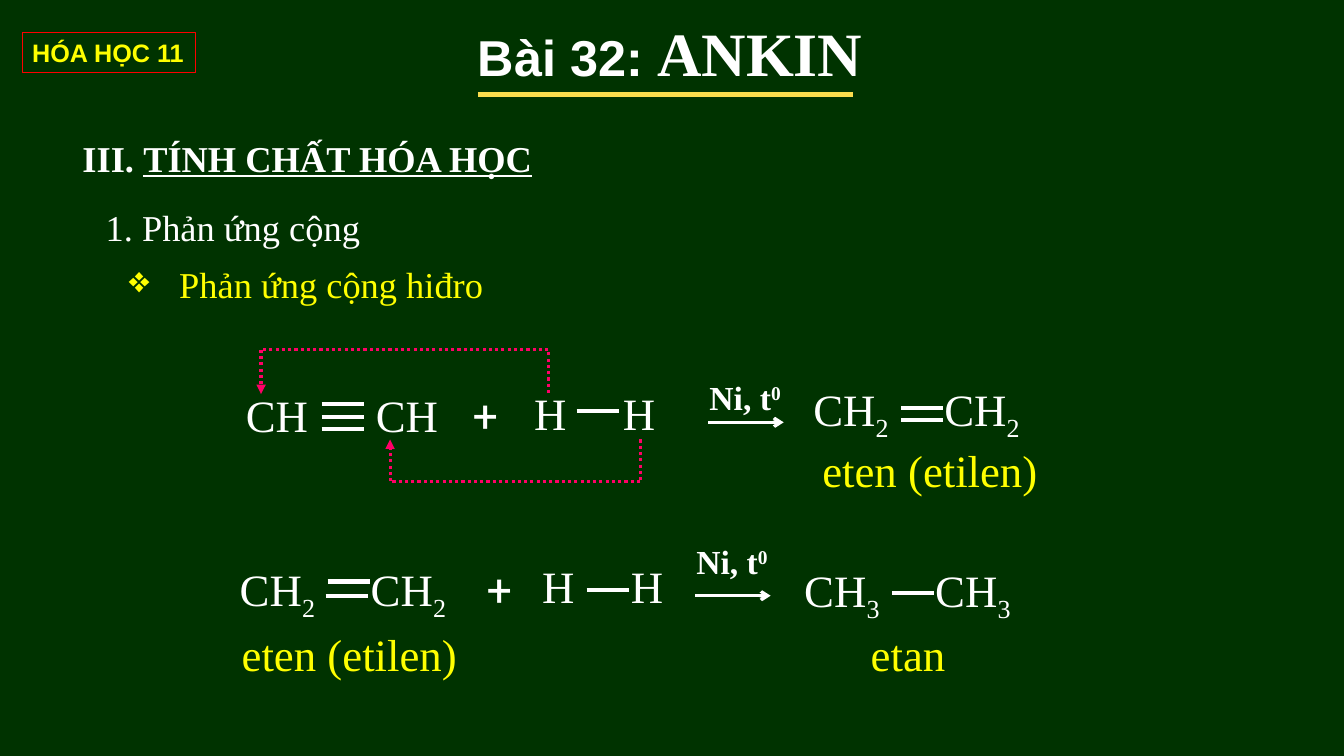
from dataclasses import dataclass

from lxml import etree
from pptx import Presentation, util as u
from pptx.dml.color import RGBColor
from pptx.enum import dml, shapes, text
from pptx.oxml.ns import qn


@dataclass(frozen=True)
class Theme:
    board: str = "003300"
    chalk: str = "FFFFFF"
    accent: str = "FFFF00"
    rule: str = "FADD4D"
    frame: str = "FF0000"
    path_color: str = "FF0066"
    serif: str = "Times New Roman"
    sans: str = "Arial"
    symbol: str = "Roboto"
    tag: int = 18
    condition: int = 24
    body: int = 26
    formula: int = 32
    title: int = 36
    topic: int = 44
    bond: float = 3
    arrow: float = 2.25


T = Theme()
CELL = u.Inches(0.1)
COLUMNS, ROWS = 133.33, 75
BOND_LENGTH = 4.2
ARROW_LENGTH = 7.5


def cells(*counts):
    return [round(count * CELL) for count in counts]


def style(run, size, color=T.chalk, face=T.serif, bold=False, underline=None, shift=0):
    run.font.size = u.Pt(size)
    run.font.name = face
    run.font.bold = bold
    run.font.underline = underline
    run.font.color.rgb = RGBColor.from_string(color)
    if shift:
        run._r.get_or_add_rPr().set("baseline", str(shift * 1000))


def fill_text(shape, parts, wrap=True):
    frame = shape.text_frame
    frame.word_wrap = wrap
    line = frame.paragraphs[0]
    line.alignment = text.PP_ALIGN.LEFT
    for words, look in parts:
        run = line.add_run()
        run.text = words
        style(run, **look)
    return line


def write(slide, box, *parts, wrap=True):
    return fill_text(slide.shapes.add_textbox(*cells(*box)), parts, wrap)


def draw_line(slide, start, end, color=T.chalk, width=T.bond, head=None, dotted=False):
    line = slide.shapes.add_connector(
        shapes.MSO_CONNECTOR.STRAIGHT, *cells(*start, *end))
    line.line.color.rgb = RGBColor.from_string(color)
    line.line.width = u.Pt(width)
    if dotted:
        line.line.dash_style = dml.MSO_LINE.ROUND_DOT
    if head:
        etree.SubElement(line.line._get_or_add_ln(), qn("a:tailEnd"), type=head)
    etree.SubElement(line._element.spPr, qn("a:effectLst"))


def header(slide, box):
    left, top, width, _ = box
    tag = slide.shapes.add_shape(
        shapes.MSO_SHAPE.RECTANGLE, *cells(left + 2.2, top + 3.2, 17.2, 4))
    tag.shadow.inherit = False
    tag.fill.background()
    tag.line.color.rgb = RGBColor.from_string(T.frame)
    tag.line.width = u.Pt(0.75)
    fill_text(tag, [("HÓA HỌC 11", dict(size=T.tag, color=T.accent, face=T.sans, bold=True))],
              wrap=False)
    middle = left + width / 2
    write(slide, (middle - 20.25, top + 1, 40.5, 8.4),
          ("Bài 32: ", dict(size=T.title, face=T.sans, bold=True)),
          ("ANKIN", dict(size=T.topic, bold=True)), wrap=False)
    draw_line(slide, (middle - 19.25, top + 9.4), (middle + 18, top + 9.4), T.rule, 3.5)


def outline(slide, box):
    left, top, width, _ = box
    write(slide, (left, top, width, 5.4),
          ("III. ", dict(size=T.body, bold=True)),
          ("TÍNH CHẤT HÓA HỌC", dict(size=T.body, bold=True, underline=True)))
    write(slide, (left + 2.3, top + 6.9, width, 5.4),
          ("1. Phản ứng cộng", dict(size=T.body)))
    hydrogen = write(slide, (left + 4.6, top + 12.5, width, 5.4),
                     ("Phản ứng cộng hiđro", dict(size=T.body, color=T.accent)))
    indent = hydrogen._p.get_or_add_pPr()
    indent.set("marL", str(u.Inches(0.5)))
    indent.set("indent", str(-u.Inches(0.5)))
    etree.SubElement(indent, qn("a:buChar"), char="❖")


def molecule(slide, left, top, atoms, count, pitch, bonds):
    for column in (left, left + pitch):
        parts = [(atoms, dict(size=T.formula))]
        if count:
            parts.append((count, dict(size=T.formula, shift=-25)))
        write(slide, (column, top, 9.6, 6.7), *parts)
    for across, down in bonds:
        draw_line(slide, (left + across, top + down),
                  (left + across + BOND_LENGTH, top + down))


def reaction(slide, box, molecules, plus, condition, arrow_drop, names):
    left, top = box[:2]
    for across, down, *formula in molecules:
        molecule(slide, left + across, top + down, *formula)
    write(slide, (left + plus[0], top + plus[1], 5, 6.7),
          ("+", dict(size=T.formula, face=T.symbol)))
    across, down = left + condition[0], top + condition[1]
    write(slide, (across, down, 10, 5),
          ("Ni, t", dict(size=T.condition, bold=True)),
          ("0", dict(size=T.condition, bold=True, shift=30)))
    draw_line(slide, (across + 0.85, down + arrow_drop),
              (across + 0.85 + ARROW_LENGTH, down + arrow_drop), width=T.arrow, head="arrow")
    for across, down, name in names:
        write(slide, (left + across, top + down, 26, 5.8),
              (name, dict(size=T.formula, color=T.accent)))


def hydrogen_path(slide, source, target, level):
    corners = [source, (source[0], level), (target[0], level), target]
    for start, end in zip(corners, corners[1:]):
        draw_line(slide, start, end, T.path_color, T.arrow,
                  "triangle" if end == target else None, dotted=True)


def hydrogen_paths(slide, box):
    left, top, _, height = box
    hydrogen_path(slide, (left + 31.4, top + 4.3), (left + 2.9, top + 4.4), top)
    hydrogen_path(slide, (left + 40.5, top + 8.9), (left + 15.7, top + 8.9), top + height)


def lesson(deck):
    slide = deck.slides.add_slide(deck.slide_layouts[6])
    slide.background.fill.solid()
    slide.background.fill.fore_color.rgb = RGBColor.from_string(T.board)
    header(slide, (0, 0, COLUMNS, 10))
    outline(slide, (7.2, 13, 50, 18))
    reaction(
        slide, (23, 37, 82, 13),
        molecules=[(0.4, 1, "CH", "", 12.9, [(8.5, 2.1), (8.5, 3.35), (8.5, 4.6)]),
                   (29, 0.8, "H", "", 8.8, [(5.2, 3)]),
                   (56.7, 0.4, "CH", "2", 13, [(9.7, 3.1), (9.7, 4.3)])],
        plus=(22.9, 1), condition=(46.4, -0.1), arrow_drop=5,
        names=[(57.6, 6.4, "eten (etilen)")])
    hydrogen_paths(slide, (23, 34.7, 43, 13.05))
    reaction(
        slide, (23, 54, 82, 14),
        molecules=[(-0.2, 1.2, "CH", "2", 13, [(9.7, 2.5), (9.5, 3.9)]),
                   (29.8, 0.9, "H", "", 8.8, [(5.4, 3.6)]),
                   (55.8, 1.3, "CH", "3", 13, [(9.7, 3.5)])],
        plus=(24.3, 1.2), condition=(45.1, -0.8), arrow_drop=5.9,
        names=[(0, 7.7, "eten (etilen)"), (62.4, 7.7, "etan")])


def main():
    deck = Presentation()
    deck.slide_width, deck.slide_height = cells(COLUMNS, ROWS)
    lesson(deck)
    deck.save("out.pptx")


if __name__ == "__main__":
    main()
